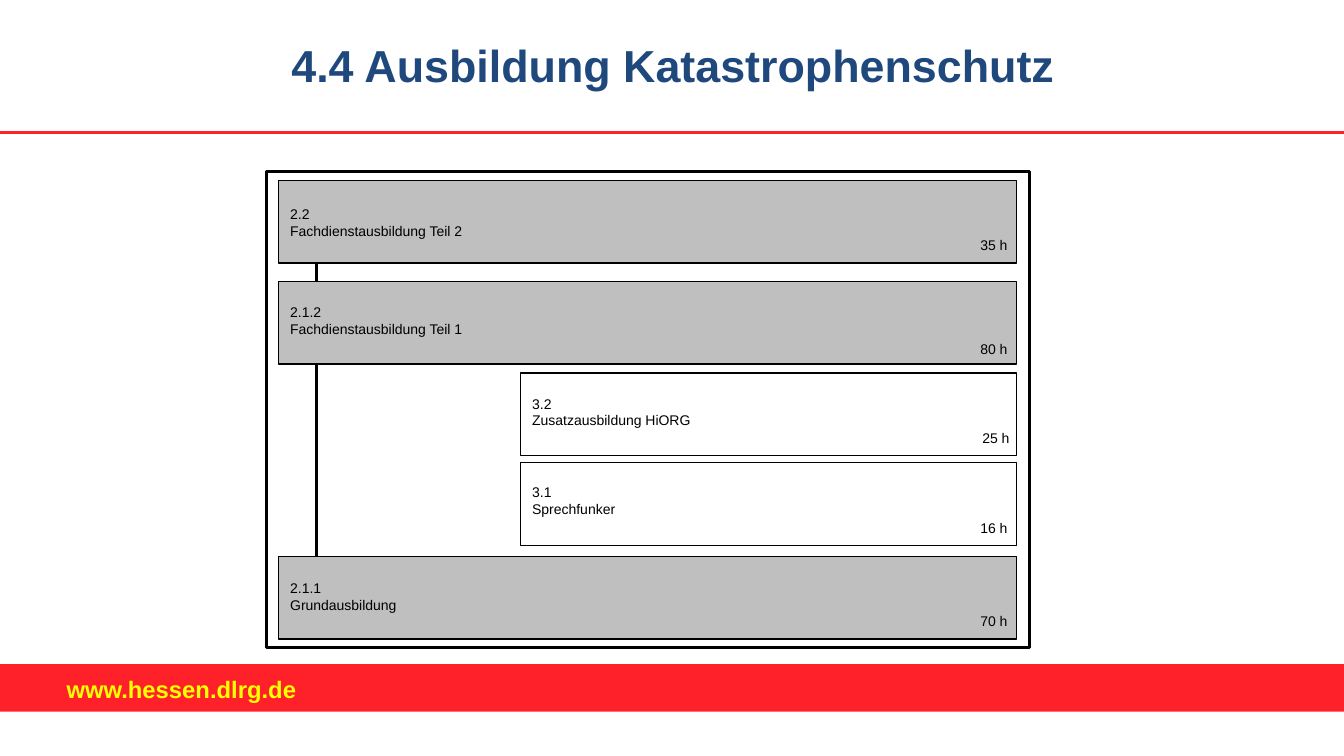
from pptx import Presentation
from pptx import util as u
from pptx.dml.color import RGBColor
from pptx.enum import shapes, text
from pptx.oxml.ns import qn
from lxml import etree

RED = RGBColor(0xFF, 0x21, 0x29)
YELLOW = RGBColor(0xFF, 0xFF, 0x00)
NAVY = RGBColor(0x1F, 0x49, 0x7D)
GREY = RGBColor(0xBF, 0xBF, 0xBF)
BLACK = RGBColor(0, 0, 0)

WIDE, HIGH = 13.33, 7.5
LEFT, RIGHT, INNER = 2.76, 10.08, 5.16
BAR = 0.82
STEM = 3.14

STAGES = [
    (LEFT, 1.79, GREY, "2.2\nFachdienstausbildung Teil 2", 1.99, "35 h", 8.95, 2.3),
    (LEFT, 2.79, GREY, "2.1.2\nFachdienstausbildung Teil 1", 2.96, "80 h", 8.95, 3.33),
    (INNER, 3.7, None, "3.2\nZusatzausbildung HiORG", 3.87, "25 h", 8.97, 4.21),
    (INNER, 4.59, None, "3.1\nSprechfunker", 4.75, "16 h", 8.95, 5.1),
    (LEFT, 5.52, GREY, "2.1.1\nGrundausbildung", 5.7, "70 h", 8.95, 6.03),
]


class Board:
    def __init__(self, slide):
        self.slide = slide
        self.style = {"name": "Arial", "size": 10, "bold": False, "color": BLACK}

    def fill_in(self, frame, words, align=text.PP_ALIGN.LEFT, **look):
        frame.text = words
        for para in frame.paragraphs:
            para.alignment = align
            for key, value in {**self.style, **look}.items():
                if key == "color":
                    para.font.color.rgb = value
                else:
                    setattr(para.font, key, u.Pt(value) if key == "size" else value)

    def title(self, words, box, **look):
        shape = self.slide.shapes.title
        for key, value in zip(("left", "top", "width", "height"), box):
            setattr(shape, key, u.Inches(value))
        frame = shape.text_frame
        frame.word_wrap = True
        frame.auto_size = text.MSO_AUTO_SIZE.NONE
        frame.vertical_anchor = text.MSO_ANCHOR.MIDDLE
        self.fill_in(frame, words, **look)

    def label(self, words, box, pad=(0.1, 0.05), **look):
        frame = self.slide.shapes.add_textbox(*map(u.Inches, box)).text_frame
        frame.word_wrap = True
        side, edge = map(u.Inches, pad)
        margins = {"margin_left": side, "margin_right": side,
                   "margin_top": edge, "margin_bottom": edge}
        for key, value in margins.items():
            setattr(frame, key, value)
        self.fill_in(frame, words, **look)

    def rect(self, box, fill=None, line=None):
        shape = self.slide.shapes.add_shape(
            shapes.MSO_SHAPE.RECTANGLE, *map(u.Inches, box))
        shape.shadow.inherit = False
        if fill is None:
            shape.fill.background()
        else:
            shape.fill.solid()
            shape.fill.fore_color.rgb = fill
        if line is None:
            shape.line.fill.background()
        else:
            shape.line.color.rgb = BLACK
            shape.line.width = u.Pt(line)

    def line(self, ends, color, width):
        link = self.slide.shapes.add_connector(
            shapes.MSO_CONNECTOR.STRAIGHT, *map(u.Inches, ends))
        link.line.color.rgb = color
        link.line.width = u.Pt(width)
        etree.SubElement(link._element.spPr, qn("a:effectLst"))


def main():
    deck = Presentation()
    deck.slide_width, deck.slide_height = u.Inches(WIDE), u.Inches(HIGH)
    board = Board(deck.slides.add_slide(deck.slide_layouts[5]))

    board.line((0, 1.31, WIDE, 1.31), RED, 2.13)
    board.rect((0, 6.59, WIDE, 0.47), fill=RED)
    board.label("www.hessen.dlrg.de", (0.52, 6.61, 3.73, 0.44), pad=(0.14, 0.08),
                size=17, bold=True, color=YELLOW)
    board.title("4.4 Ausbildung Katastrophenschutz", (2.79, 0.1, 8.19, 1.09),
                size=32, bold=True, color=NAVY)

    board.rect((2.64, 1.7, 7.57, 4.72), line=2)
    for left, top, fill, name, row, hours, col, foot in STAGES:
        board.rect((left, top, RIGHT - left, BAR), fill=fill, line=1)
        board.label(name, (left + 0.02, row, 4.9, 0.5))
        board.label(hours, (col, foot, 1.14, 0.31), align=text.PP_ALIGN.RIGHT)

    tops = [stage[1] for stage in STAGES if stage[0] == LEFT]
    for upper, lower in zip(tops, tops[1:]):
        board.line((STEM, upper + BAR, STEM, lower), BLACK, 2)

    deck.save("out.pptx")


if __name__ == "__main__":
    main()
